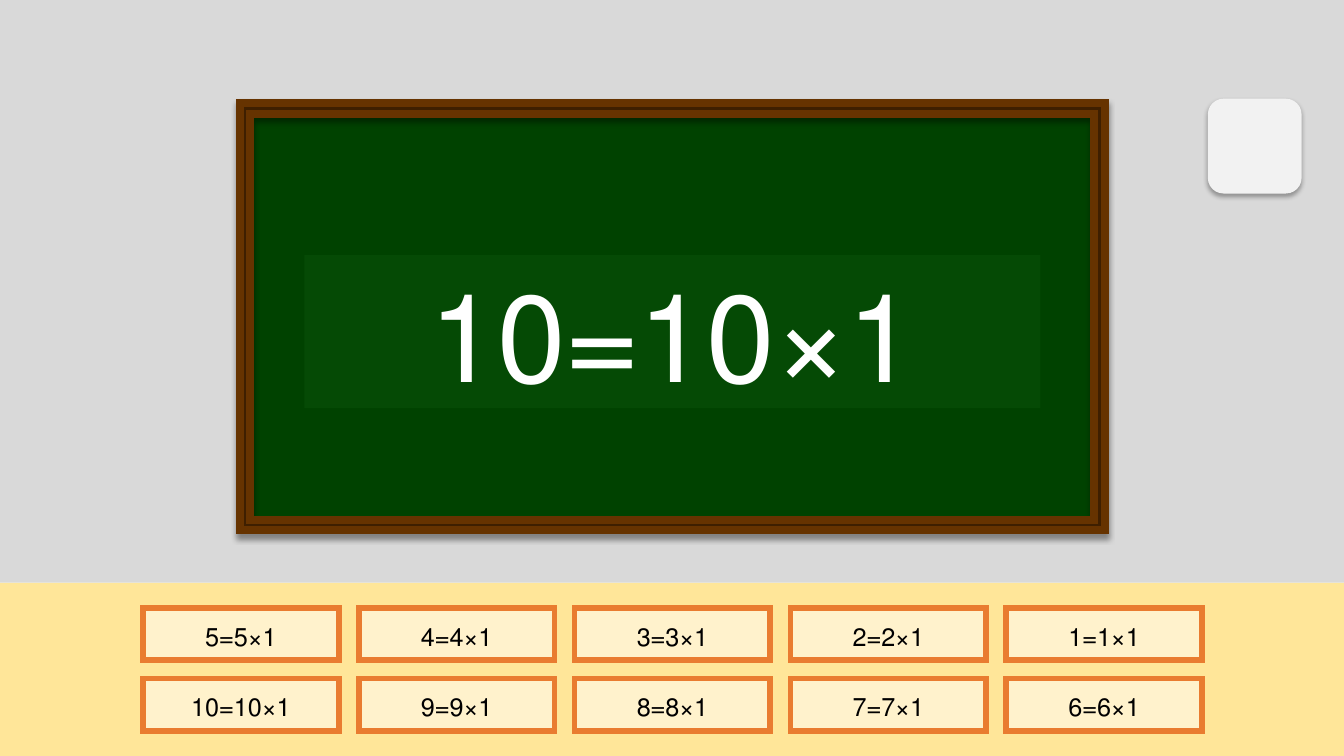
from dataclasses import dataclass

from lxml.etree import SubElement
from pptx import Presentation
from pptx.dml.color import RGBColor
from pptx.enum.shapes import MSO_SHAPE
from pptx.enum.text import MSO_ANCHOR, PP_ALIGN
from pptx.oxml.ns import qn
from pptx.util import Inches, Pt


@dataclass(frozen=True)
class Theme:
    """Colours, font and type sizes of the slide."""
    wall: str = "D9D9D9"
    desk: str = "FFE699"
    board: str = "004200"
    frame: str = "3E1F00"
    wood: str = "663300"
    tile: str = "F2F2F2"
    card: str = "FFF2CC"
    card_edge: str = "E97C30"
    answer: str = "054A05"
    ink: str = "000000"
    chalk: str = "FFFFFF"
    font: str = "Calibri"
    card_size: int = 18
    answer_size: int = 88


class BoardSlide:
    """Draws the elements of one slide in one theme."""

    def __init__(self, slide, theme):
        """Keep the slide and its theme."""
        self.slide = slide
        self.theme = theme

    def paint(self, shape, fill, line=None, width=0):
        """Set fill and line, and clear the shadow."""
        shape.shadow.inherit = False
        shape.fill.solid()
        shape.fill.fore_color.rgb = RGBColor.from_string(fill)
        if line:
            shape.line.color.rgb = RGBColor.from_string(line)
            shape.line.width = Pt(width)
            SubElement(shape.line._get_or_add_ln(), qn("a:miter"), lim="800000")
        else:
            shape.line.fill.background()
        return shape

    def block(self, box, fill, line=None, width=0, kind=MSO_SHAPE.RECTANGLE):
        """Add a preset shape."""
        shape = self.slide.shapes.add_shape(kind, *map(Inches, box))
        return self.paint(shape, fill, line, width)

    def outline(self, contours, fill, line, width):
        """Add a freeform made of closed contours."""
        contours = [[(Inches(x), Inches(y)) for x, y in contour] for contour in contours]
        builder = self.slide.shapes.build_freeform(*contours[0][0])
        for index, (start, *points) in enumerate(contours):
            if index:
                builder.move_to(*start)
            builder.add_line_segments(points, close=True)
        return self.paint(builder.convert_to_shape(), fill, line, width)

    def shadow(self, shape, opacity, blur, distance):
        """Add a black shadow falling downwards."""
        effects = shape._element.spPr.find(qn("a:effectLst"))
        outer = SubElement(effects, qn("a:outerShdw"), blurRad=str(Pt(blur)),
                           dist=str(Pt(distance)), dir="5400000", algn="t", rotWithShape="0")
        color = SubElement(outer, qn("a:srgbClr"), val=self.theme.ink)
        SubElement(color, qn("a:alpha"), val=str(opacity * 1000))

    def equation(self, shape, text, size, color):
        """Write a centred right-to-left equation in a shape."""
        frame = shape.text_frame
        frame.word_wrap = True
        frame.vertical_anchor = MSO_ANCHOR.MIDDLE
        frame.margin_left = frame.margin_right = frame.margin_bottom = Inches(0.39)
        frame.margin_top = Inches(0.43)
        frame.text = text
        paragraph = frame.paragraphs[0]
        paragraph.alignment = PP_ALIGN.CENTER
        paragraph._p.get_or_add_pPr().set("rtl", "1")
        font = paragraph.runs[0].font
        font.name = self.theme.font
        font.size = Pt(size)
        font.color.rgb = RGBColor.from_string(color)


def corners(left, top, right, bottom):
    """Return the corners of a rectangle, clockwise."""
    return [(left, top), (right, top), (right, bottom), (left, bottom)]


def main():
    """Build and save the slide."""
    presentation = Presentation()
    presentation.slide_width, presentation.slide_height = Inches(13.33), Inches(7.5)
    theme = Theme()
    page = BoardSlide(presentation.slides.add_slide(presentation.slide_layouts[6]), theme)

    page.block((-0.06, 5.78, 13.45, 1.72), theme.desk)
    page.block((-0.06, 0, 13.45, 5.78), theme.wall)

    inner = corners(2.48, 1.13, 10.85, 5.16)
    outer = corners(2.38, 1.02, 10.96, 5.26)
    page.outline([inner], theme.board, theme.wood, 6)
    frame = page.outline([outer, inner[:1] + inner[:0:-1]], theme.frame, theme.wood, 6)
    page.shadow(frame, 40, 4, 3)

    tile = page.block((11.98, 0.98, 0.93, 0.94), theme.tile, kind=MSO_SHAPE.ROUNDED_RECTANGLE)
    page.shadow(tile, 32, 3.5, 2.2)

    for number in range(1, 11):
        row, column = divmod(number - 1, 5)
        card = page.block((9.98 - 2.14 * column, 6.03 + 0.7 * row, 1.94, 0.52),
                          theme.card, theme.card_edge, 4)
        page.equation(card, f"1×{number}={number}", theme.card_size, theme.ink)

    answer = page.block((3.02, 2.53, 7.3, 1.52), theme.answer)
    page.equation(answer, "1×10=10", theme.answer_size, theme.chalk)

    presentation.save("out.pptx")


if __name__ == "__main__":
    main()
